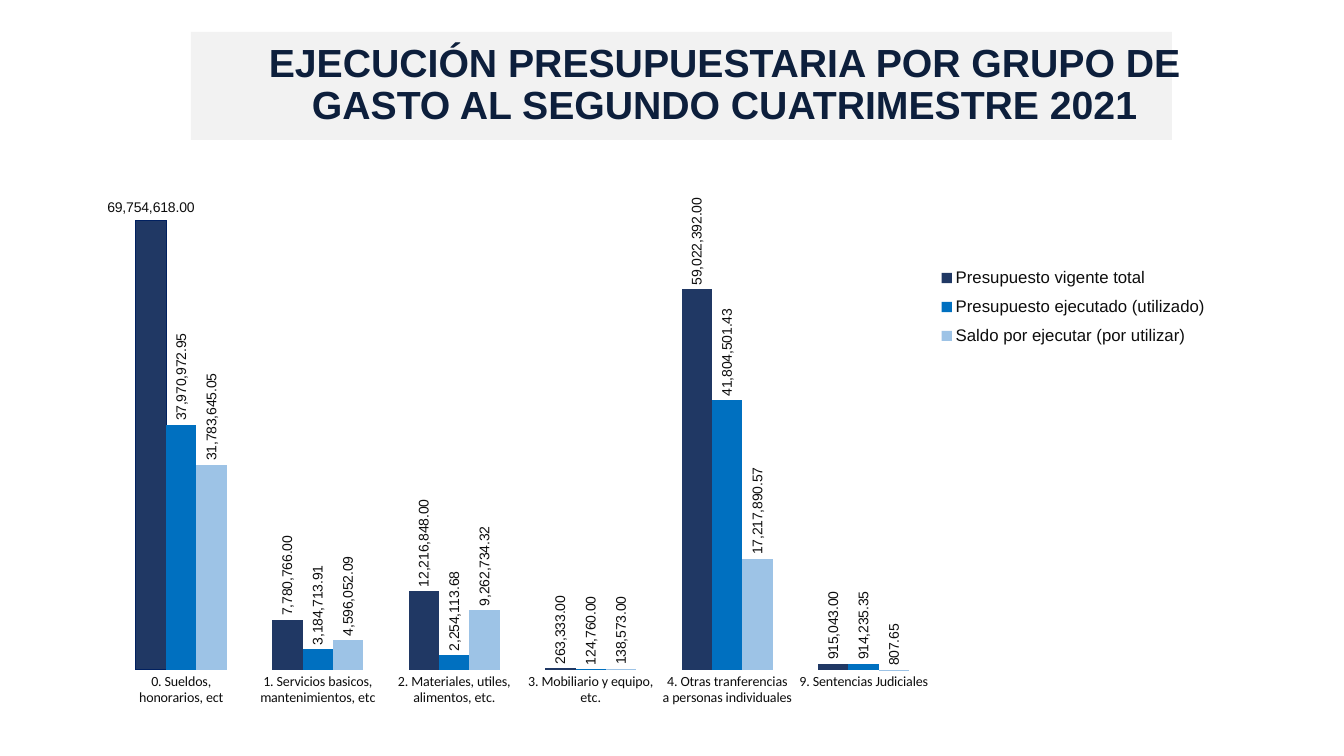
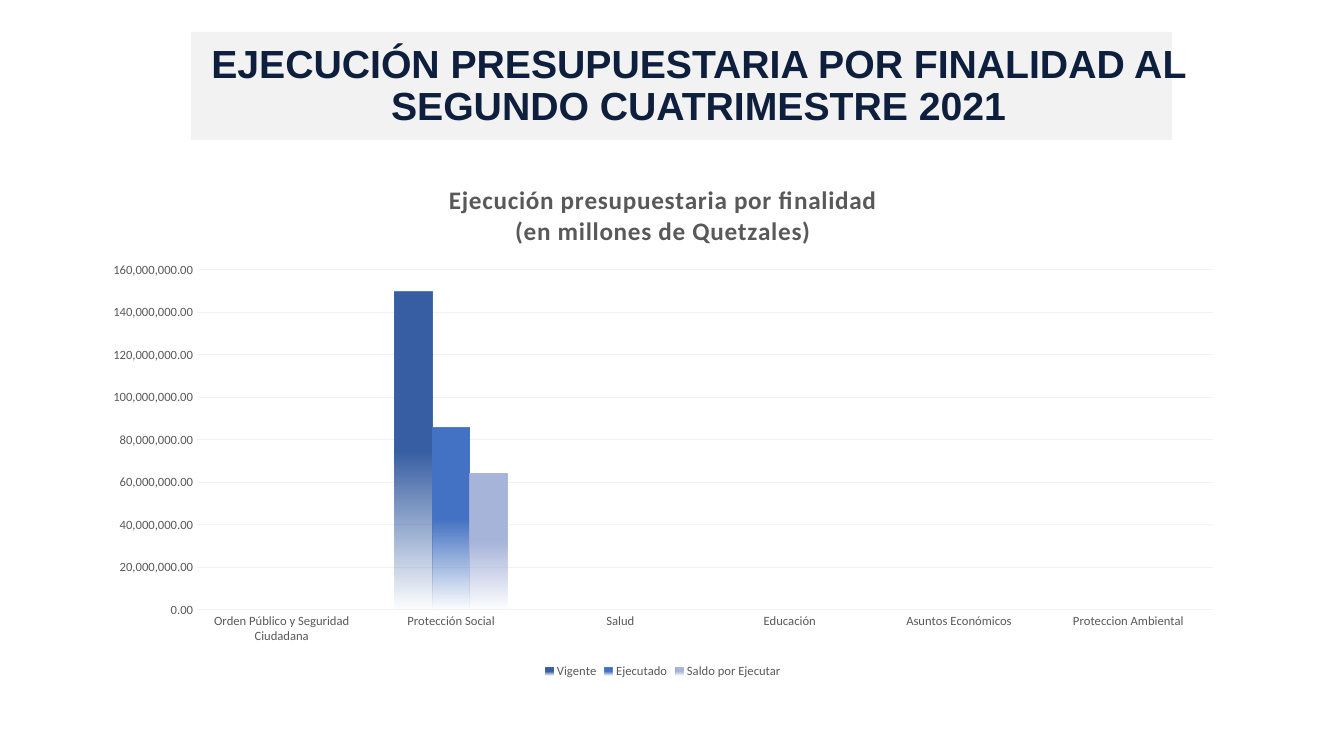
"""Build two budget execution slides, each with a titled band and a column chart."""
from lxml.etree import SubElement
from pptx import Presentation
from pptx.chart.data import CategoryChartData
from pptx.dml.color import RGBColor
from pptx.enum.chart import XL_CHART_TYPE, XL_LABEL_POSITION, XL_LEGEND_POSITION, XL_TICK_MARK
from pptx.enum.shapes import MSO_SHAPE
from pptx.enum.text import MSO_ANCHOR, MSO_AUTO_SIZE, PP_ALIGN
from pptx.oxml import parse_xml
from pptx.oxml.ns import nsdecls, qn
from pptx.util import Pt

SLIDE_PX = (1344, 756)
SCALE = 12192000 / 1344
NAVY, BAND, INK, GREY = "0D1F3C", "F2F2F2", "0D0D0D", "595959"
BAND_BOX = (191, 32, 981, 108)
NUMBER = "#,##0.00"

GROUP = {
    "title": "EJECUCIÓN PRESUPUESTARIA POR GRUPO DE GASTO AL SEGUNDO CUATRIMESTRE 2021",
    "title_box": (191, 40, 1067, 92),
    "box": (91, 142, 1147, 581),
    "plot": (113, 154, 819, 516),
    "top": 80_000_000,
    "cats": [
        "0. Sueldos,\nhonorarios, ect",
        "1. Servicios basicos,\nmantenimientos, etc",
        "2. Materiales, utiles, alimentos, etc.",
        "3. Mobiliario y equipo, etc.",
        "4. Otras tranferencias a personas individuales",
        "9. Sentencias Judiciales",
    ],
    "series": [
        ("Presupuesto vigente total", "203864",
         (69754618, 7780766, 12216848, 263333, 59022392, 915043)),
        ("Presupuesto ejecutado (utilizado)", "0070C0",
         (37970972.95, 3184713.91, 2254113.68, 124760, 41804501.43, 914235.35)),
        ("Saldo por ejecutar (por utilizar)", "9DC3E6",
         (31783645.05, 4596052.09, 9262734.32, 138573, 17217890.57, 807.65)),
    ],
    "cat_font": {"size": 10, "color": INK},
    "legend_font": {"size": 12, "color": INK, "font": "Arial"},
    "legend": XL_LEGEND_POSITION.RIGHT,
}
PURPOSE = {
    "title": "EJECUCIÓN PRESUPUESTARIA POR FINALIDAD AL SEGUNDO CUATRIMESTRE 2021",
    "title_box": (191, 40, 1015, 93),
    "box": (90, 165, 1146, 518),
    "plot": (197, 270, 1016, 340),
    "top": 160_000_000,
    "cats": ["Orden Público y Seguridad Ciudadana", "Protección Social", "Salud",
             "Educación", "Asuntos Económicos", "Proteccion Ambiental"],
    "series": [
        ("Vigente", "385FA3", (0, 150_000_000, 0, 0, 0, 0)),
        ("Ejecutado", "4472C4", (0, 86_000_000, 0, 0, 0, 0)),
        ("Saldo por Ejecutar", "A8B5DB", (0, 64_000_000, 0, 0, 0, 0)),
    ],
    "cat_font": {"size": 9, "color": GREY},
    "legend_font": {"size": 9, "color": GREY},
    "legend": XL_LEGEND_POSITION.BOTTOM,
}
GROUP_LEGEND_BOX = (932, 258, 283, 98)
CHART_TITLE = ("Ejecución presupuestaria por finalidad", "(en millones de Quetzales)")


def emu(box):
    return [round(v * SCALE) for v in box]


def rgb(value):
    return RGBColor.from_string(value)


def style(f, size, color, font="Calibri", bold=False):
    f.size, f.name, f.bold = Pt(size), font, bold
    f.color.rgb = rgb(color)


def write(p, text, align=PP_ALIGN.CENTER, line=None, tracking=None, **font):
    p.alignment = align
    if line:
        p.line_spacing = line
    r = p.add_run()
    r.text = text
    style(r.font, **font)
    if tracking:
        r._r.get_or_add_rPr().set("spc", str(tracking))


def add_band(s):
    sp = s.shapes.add_shape(MSO_SHAPE.RECTANGLE, *emu(BAND_BOX))
    sp.shadow.inherit = False
    sp.fill.solid()
    sp.fill.fore_color.rgb = rgb(BAND)
    sp.line.fill.background()
    sp.element.nvSpPr.cNvPr.set("id", "99")
    s.slide_layout.shapes[0].element.addprevious(sp.element)


def add_title(s, text, box):
    sp = s.shapes.title
    sp.left, sp.top, sp.width, sp.height = emu(box)
    tf = sp.text_frame
    tf.word_wrap, tf.auto_size = True, MSO_AUTO_SIZE.NONE
    tf.vertical_anchor = MSO_ANCHOR.MIDDLE
    write(tf.paragraphs[0], text, line=0.9, size=28, color=NAVY, font="Arial", bold=True)


def place(parent, index, box, frame, inner=False):
    for old in parent.findall(qn("c:layout")):
        parent.remove(old)
    layout = parent.makeelement(qn("c:layout"))
    manual = SubElement(layout, qn("c:manualLayout"))
    fields = [("layoutTarget", "inner")] if inner else []
    fields += [("xMode", "edge"), ("yMode", "edge")]
    fractions = ((box[0] - frame[0]) / frame[2], (box[1] - frame[1]) / frame[3],
                 box[2] / frame[2], box[3] / frame[3])
    fields += [(k, f"{v:.4f}") for k, v in zip("xywh", fractions)]
    for name, value in fields:
        SubElement(manual, qn(f"c:{name}")).set("val", value)
    parent.insert(index, layout)


def add_columns(s, d):
    data = CategoryChartData(number_format=NUMBER)
    data.categories = d["cats"]
    for name, _, values in d["series"]:
        data.add_series(name, values)
    chart = s.shapes.add_chart(XL_CHART_TYPE.COLUMN_CLUSTERED, *emu(d["box"]), data).chart
    style(chart.font, 10, "000000")
    chart.has_title = False
    plot = chart.plots[0]
    plot.vary_by_categories, plot.gap_width, plot.overlap = False, 150, 0
    for series, (_, color, _) in zip(plot.series, d["series"]):
        series.invert_if_negative = False
        series.format.fill.solid()
        series.format.fill.fore_color.rgb = rgb(color)
    cat, val = chart.category_axis, chart.value_axis
    cat.format.line.fill.background()
    cat.major_tick_mark = XL_TICK_MARK.NONE
    style(cat.tick_labels.font, **d["cat_font"])
    val.minimum_scale, val.maximum_scale, val.major_unit = 0, d["top"], 20_000_000
    val.has_major_gridlines = False
    chart.has_legend = True
    chart.legend.position = d["legend"]
    chart.legend.include_in_layout = False
    style(chart.legend.font, **d["legend_font"])
    place(chart._chartSpace.chart.plotArea, 0, d["plot"], d["box"], inner=True)
    return chart


def label_values(series):
    labels = series.data_labels
    labels.show_value = True
    labels.number_format, labels.number_format_is_linked = NUMBER, False
    labels.position = XL_LABEL_POSITION.OUTSIDE_END
    style(labels.font, 10, INK, "Arial")
    body = labels._element.find(qn("c:txPr")).find(qn("a:bodyPr"))
    body.set("rot", "-5400000")
    body.set("vert", "horz")


def fade(series, color):
    series.format.fill.background()
    sp_pr = series._element.get_or_add_spPr()
    grad = parse_xml(
        f'<a:gradFill {nsdecls("a")}><a:gsLst>'
        f'<a:gs pos="0"><a:srgbClr val="{color}"/></a:gs>'
        f'<a:gs pos="50000"><a:srgbClr val="{color}"/></a:gs>'
        f'<a:gs pos="100000"><a:srgbClr val="{color}"><a:alpha val="0"/></a:srgbClr></a:gs>'
        '</a:gsLst><a:lin ang="5400000" scaled="0"/></a:gradFill>')
    sp_pr.replace(sp_pr.find(qn("a:noFill")), grad)


def finish_group(chart):
    chart.value_axis.visible = False
    place(chart.legend._element, 1, GROUP_LEGEND_BOX, GROUP["box"])
    for series in chart.plots[0].series:
        label_values(series)
    point = chart.plots[0].series[0].points[0]
    point.format.fill.solid()
    point.format.fill.fore_color.rgb = rgb("203864")
    point.format.line.color.rgb = rgb("002060")
    style(point.data_label.font, 10, INK, "Arial")
    point.data_label.position = XL_LABEL_POSITION.OUTSIDE_END


def finish_purpose(chart):
    val = chart.value_axis
    val.has_major_gridlines = True
    val.major_gridlines.format.line.color.rgb = rgb(BAND)
    val.major_gridlines.format.line.width = Pt(0.75)
    val.format.line.fill.background()
    val.major_tick_mark = XL_TICK_MARK.NONE
    val.tick_labels.number_format = NUMBER
    val.tick_labels.number_format_is_linked = False
    style(val.tick_labels.font, 9, GREY)
    for series, (_, color, _) in zip(chart.plots[0].series, PURPOSE["series"]):
        fade(series, color)
    tf = chart.chart_title.text_frame
    chart.chart_title.include_in_layout = False
    for i, text in enumerate(CHART_TITLE):
        p = tf.add_paragraph() if i else tf.paragraphs[0]
        write(p, text, tracking=50, size=18, color=GREY, bold=True)


def main():
    prs = Presentation()
    prs.slide_width, prs.slide_height = emu(SLIDE_PX)
    layout = prs.slide_layouts[5]
    for i, (d, finish) in enumerate(((GROUP, finish_group), (PURPOSE, finish_purpose))):
        s = prs.slides.add_slide(layout)
        if i == 0:
            add_band(s)
        add_title(s, d["title"], d["title_box"])
        finish(add_columns(s, d))
    prs.save("out.pptx")


if __name__ == "__main__":
    main()
